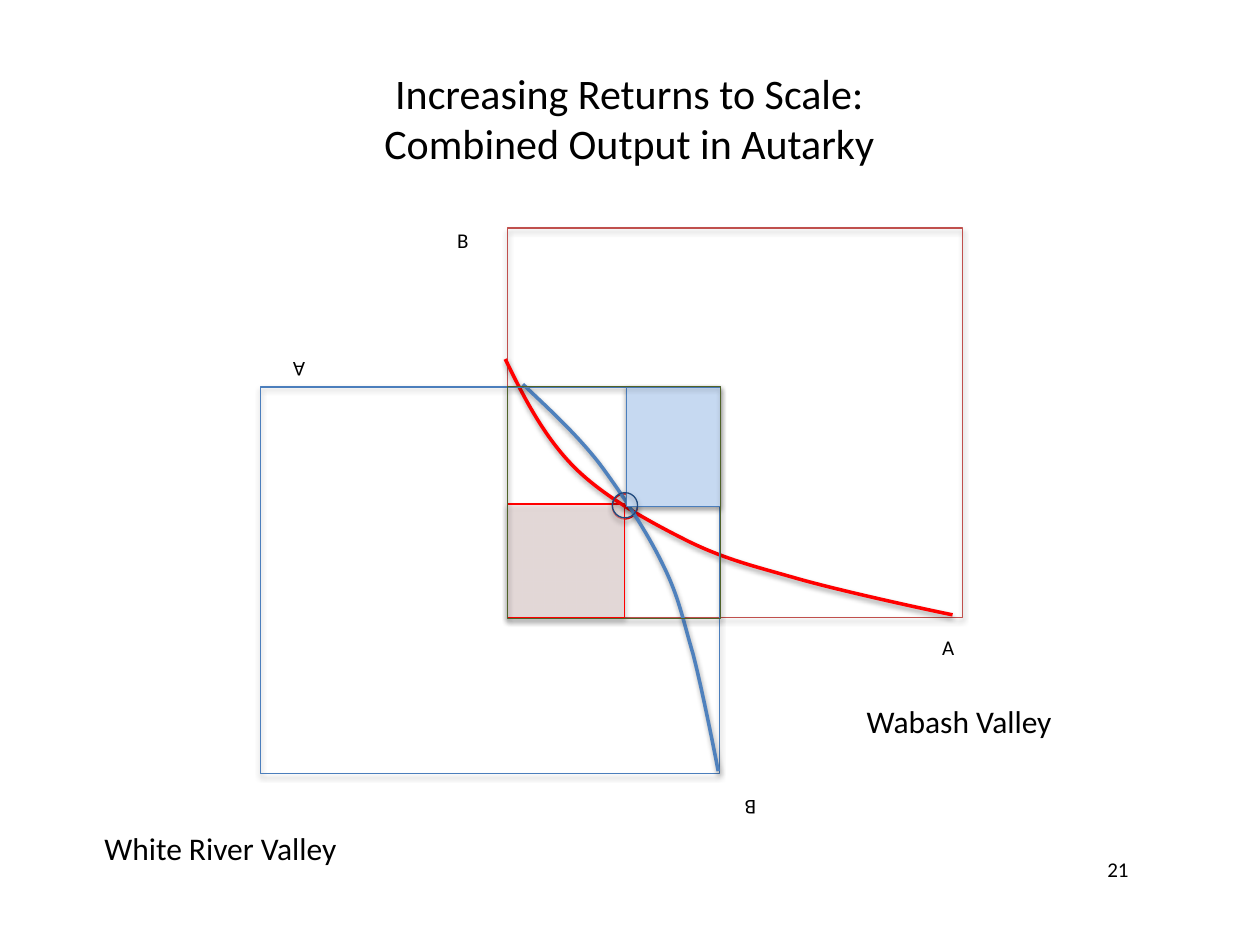
import pptx
import pptx.util
import pptx.dml.color
import pptx.enum.shapes
import pptx.enum.text
import pptx.oxml
import pptx.oxml.ns
import lxml.etree

Inches, Pt = pptx.util.Inches, pptx.util.Pt
qn = pptx.oxml.ns.qn
SHAPE = pptx.enum.shapes.MSO_SHAPE

COLORS = {
    "black": "000000", "white": "FFFFFF", "red": "FF0000",
    "brick": "C0504D", "blush": "F2DCDB", "blue": "4B7EBC",
    "curve_blue": "4F81BD", "pale_blue": "C6D9F1", "navy": "1F497D",
    "green": "4F6228",
}


class Diagram:
    """Holds the slide being drawn and its shared style."""
    font = "Calibri"

    def __init__(self, s):
        self.s = s

    def rgb(self, name):
        return pptx.dml.color.RGBColor.from_string(COLORS[name])

    def format_text(self, tf, size, align):
        for p in tf.paragraphs:
            p.alignment = align
            for r in p.runs:
                r.font.name = self.font
                r.font.size = Pt(size)
                r.font.color.rgb = self.rgb("black")

    def title(self, text, box):
        sp = self.s.shapes.title
        sp.left, sp.top, sp.width, sp.height = map(Inches, box)
        tf = sp.text_frame
        tf.text = text
        tf.vertical_anchor = pptx.enum.text.MSO_ANCHOR.MIDDLE
        self.format_text(tf, 24, pptx.enum.text.PP_ALIGN.CENTER)

    def label(self, text, box, size=12, rotation=0, line=None):
        sp = self.s.shapes.add_textbox(*map(Inches, box))
        sp.rotation = rotation
        tf = sp.text_frame
        tf.word_wrap = True
        tf.text = text
        self.format_text(tf, size, pptx.enum.text.PP_ALIGN.LEFT)
        if line:
            sp.line.color.rgb = self.rgb(line)
            sp.line.width = Pt(0.75)

    def outline(self, sp, color, width, shadow_alpha, shadow_dist):
        """Give a shape its line and a soft shadow straight below it."""
        sp.line.color.rgb = self.rgb(color)
        sp.line.width = Pt(width)
        sp.shadow.inherit = False
        effects = sp._element.spPr.find(qn("a:effectLst"))
        shadow = lxml.etree.SubElement(
            effects, qn("a:outerShdw"), blurRad=str(Pt(3.1)),
            dist=str(Pt(shadow_dist)), dir="5400000", rotWithShape="0")
        color_el = lxml.etree.SubElement(shadow, qn("a:srgbClr"), val=COLORS["black"])
        lxml.etree.SubElement(color_el, qn("a:alpha"), val=str(shadow_alpha * 1000))

    def shape(self, kind, box, line, fill=None, opacity=100, rotation=0):
        sp = self.s.shapes.add_shape(kind, *map(Inches, box))
        sp.rotation = rotation
        if fill:
            sp.fill.solid()
            sp.fill.fore_color.rgb = self.rgb(fill)
            if opacity < 100:
                color_el = sp._element.spPr.find(".//" + qn("a:srgbClr"))
                lxml.etree.SubElement(color_el, qn("a:alpha"), val=str(opacity * 1000))
        else:
            sp.fill.background()
        self.outline(sp, line, 0.75, 35, 1.8)

    def curve(self, points, line):
        """Draw a Bezier curve: a start, then three points per segment."""
        start, *rest = [(Inches(x), Inches(y)) for x, y in points]
        builder = self.s.shapes.build_freeform(*start)
        builder.add_line_segments(rest, close=False)
        sp = builder.convert_to_shape()
        sp.fill.background()
        self.outline(sp, line, 2, 38, 1.6)
        outline = sp._element.spPr.find(".//" + qn("a:path"))
        steps = outline.findall(qn("a:lnTo"))
        for i in range(0, len(steps), 3):
            bezier = lxml.etree.SubElement(outline, qn("a:cubicBezTo"))
            for step in steps[i:i + 3]:
                bezier.append(step[0])
                outline.remove(step)


def main():
    prs = pptx.Presentation()
    prs.slide_width, prs.slide_height = Inches(10), Inches(7.5)
    d = Diagram(prs.slides.add_slide(prs.slide_layouts[5]))

    d.title("Increasing Returns to Scale:\nCombined Output in Autarky",
            (1.76, 0.48, 6.47, 0.91))
    d.label("21", (8.69, 6.75, 0.56, 0.3))
    d.label("Wabash Valley", (6.78, 5.52, 1.83, 0.42), size=18)
    d.label("White River Valley", (0.73, 6.53, 2.1, 0.4), size=18)

    # Wabash Valley: axes start at the lower left
    d.label("B", (3.53, 1.76, 0.57, 0.3), line="white")
    d.label("A", (7.38, 4.99, 0.66, 0.3), line="white")
    d.shape(SHAPE.RECTANGLE, (4.03, 1.81, 3.61, 3.09), "brick")
    d.shape(SHAPE.OVAL, (4.86, 3.92, 0.2, 0.2), "red")
    d.shape(SHAPE.RECTANGLE, (4.03, 4, 0.93, 0.9), "red", "blush", opacity=50)
    d.curve([(4.01, 2.85),
             (4.16, 3.16), (4.32, 3.47), (4.56, 3.71),
             (4.8, 3.95), (5.17, 4.15), (5.47, 4.3),
             (5.76, 4.44), (5.97, 4.49), (6.32, 4.59),
             (6.67, 4.69), (7.36, 4.84), (7.56, 4.88)], "red")

    # White River Valley: turned upside down, axes start at the upper right
    d.shape(SHAPE.RECTANGLE, (2.07, 3.07, 3.64, 3.07), "blue", rotation=180)
    d.label("A", (1.91, 2.79, 0.61, 0.3), rotation=180)
    d.label("B", (5.51, 6.27, 0.59, 0.3), rotation=180)
    d.curve([(4.15, 3.05),
             (4.35, 3.24), (4.56, 3.43), (4.75, 3.67),
             (4.93, 3.91), (5.14, 4.23), (5.26, 4.48),
             (5.39, 4.74), (5.42, 4.92), (5.5, 5.19),
             (5.57, 5.46), (5.67, 5.96), (5.7, 6.12)], "curve_blue")
    d.shape(SHAPE.RECTANGLE, (4.97, 3.07, 0.75, 0.95), "blue", "pale_blue", rotation=180)
    d.shape(SHAPE.OVAL, (4.86, 3.91, 0.2, 0.2), "navy", rotation=180)

    # Combined output
    d.shape(SHAPE.RECTANGLE, (4.03, 3.07, 1.69, 1.84), "green")

    prs.save("out.pptx")


if __name__ == "__main__":
    main()
